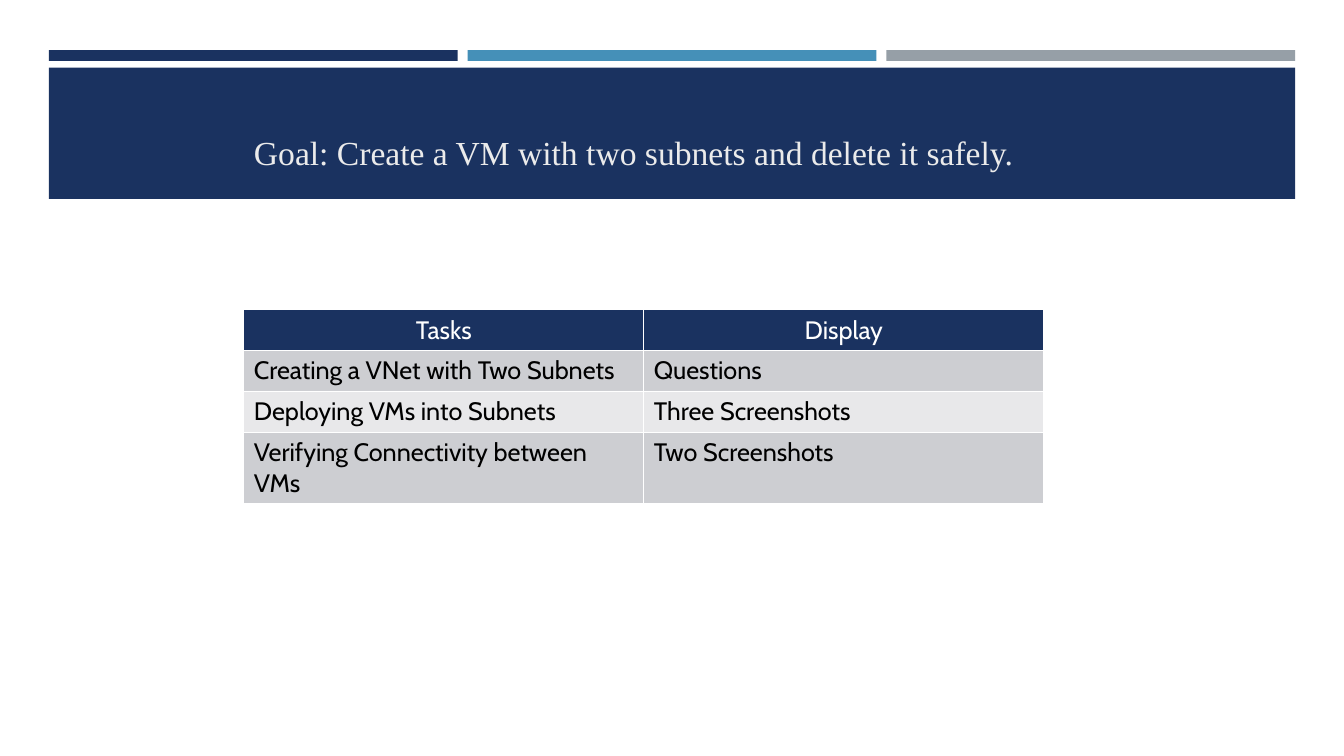
from lxml import etree
from pptx import Presentation
from pptx.dml.color import RGBColor
from pptx.enum import shapes, text
from pptx.oxml import ns
from pptx.util import Pt

TITLE = "Goal: Create a VM with two subnets and delete it safely."
ROWS = [
    ("Tasks", "Display"),
    ("Creating a VNet with Two Subnets", "Questions"),
    ("Deploying VMs into Subnets", "Three Screenshots"),
    ("Verifying Connectivity between VMs", "Two Screenshots"),
]
COLORS = {
    "navy": "1A3260", "blue": "4590B8", "gray": "969FA7", "title": "EBEBEB",
    "odd": "CDCED2", "even": "E8E8EA", "white": "FFFFFF", "black": "000000",
}
STRIPES = ["navy", "blue", "gray"]

# Layout in points
BAND_LEFT, BAND_TOP, BAND_WIDTH, BAND_HEIGHT = 34.9, 48.3, 890.2, 93.8
STRIPE_TOP, STRIPE_HEIGHT, STRIPE_GAP = 35.9, 7.6, 7.2
CONTENT_LEFT, CONTENT_WIDTH = 174.2, 571.4
TITLE_TOP, TITLE_HEIGHT = 88.6, 40
TABLE_TOP, ROW_HEIGHT = 221.2, 29.2


def color(name):
    return RGBColor.from_string(COLORS[name])


def add_bar(page, left, top, width, height, fill):
    bar = page.shapes.add_shape(shapes.MSO_SHAPE.RECTANGLE,
                                Pt(left), Pt(top), Pt(width), Pt(height))
    bar.shadow.inherit = False
    bar.fill.solid()
    bar.fill.fore_color.rgb = color(fill)
    bar.line.fill.background()


def add_borders(cell, fill, width):
    properties = cell._tc.get_or_add_tcPr()
    for side in ("a:lnL", "a:lnR", "a:lnT", "a:lnB"):
        line = etree.SubElement(properties, ns.qn(side), w=str(Pt(width)))
        solid = etree.SubElement(line, ns.qn("a:solidFill"))
        etree.SubElement(solid, ns.qn("a:srgbClr"), val=COLORS[fill])


deck = Presentation()
deck.slide_width, deck.slide_height = Pt(960), Pt(540)
page = deck.slides.add_slide(deck.slide_layouts[5])

# Stripes and title band
stripe_width = (BAND_WIDTH - 2 * STRIPE_GAP) / len(STRIPES)
for index, fill in enumerate(STRIPES):
    left = BAND_LEFT + index * (stripe_width + STRIPE_GAP)
    add_bar(page, left, STRIPE_TOP, stripe_width, STRIPE_HEIGHT, fill)
add_bar(page, BAND_LEFT, BAND_TOP, BAND_WIDTH, BAND_HEIGHT, "navy")

# Title, moved in front of the band
title = page.shapes.title
page.shapes._spTree.append(title._element)
title.left, title.top = Pt(CONTENT_LEFT), Pt(TITLE_TOP)
title.width, title.height = Pt(CONTENT_WIDTH), Pt(TITLE_HEIGHT)
title.text_frame.text = TITLE
title.text_frame.vertical_anchor = text.MSO_ANCHOR.MIDDLE
title.text_frame.auto_size = text.MSO_AUTO_SIZE.NONE
para = title.text_frame.paragraphs[0]
para.alignment = text.PP_ALIGN.LEFT
para.font.name, para.font.size = "Times New Roman", Pt(24)
para.font.color.rgb = color("title")

# Task table
table = page.shapes.add_table(len(ROWS), len(ROWS[0]), Pt(CONTENT_LEFT), Pt(TABLE_TOP),
                              Pt(CONTENT_WIDTH), Pt(ROW_HEIGHT * len(ROWS))).table
for row_index, row in enumerate(ROWS):
    header = row_index == 0
    fill = "navy" if header else "odd" if row_index % 2 else "even"
    for column_index, words in enumerate(row):
        cell = table.cell(row_index, column_index)
        add_borders(cell, "white", 1)
        cell.fill.solid()
        cell.fill.fore_color.rgb = color(fill)
        cell.text = words
        para = cell.text_frame.paragraphs[0]
        para.alignment = text.PP_ALIGN.CENTER if header else text.PP_ALIGN.LEFT
        para.font.name, para.font.size = "Cabin", Pt(18)
        para.font.bold = False
        para.font.color.rgb = color("white" if header else "black")

deck.save("out.pptx")
